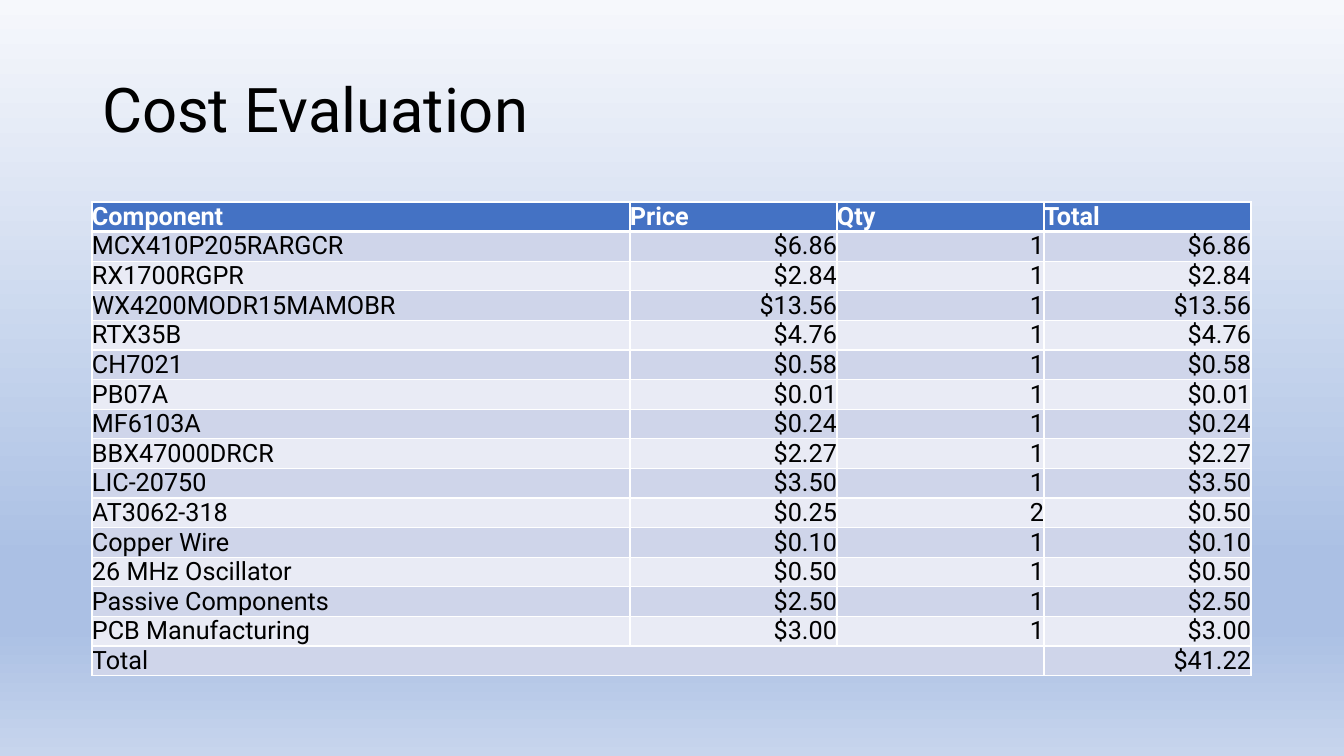
from copy import deepcopy

from pptx import Presentation
from pptx.dml.color import RGBColor
from pptx.enum.text import MSO_ANCHOR, PP_ALIGN
from pptx.oxml import parse_xml
from pptx.oxml.ns import nsdecls, qn
from pptx.util import Pt

MIDDLE = MSO_ANCHOR.MIDDLE
LEFT, RIGHT = PP_ALIGN.LEFT, PP_ALIGN.RIGHT
EMU_PER_PX = 12192000 / 1344
FONT = "Roboto"
BLACK, WHITE = "000000", "FFFFFF"
HEADER_BLUE = "4472C4"
BANDS = ["CFD5EA", "E9EBF5"]
SKY = [(0, "F6F8FC"), (74, "ABC0E4"), (83, "ABC0E4"), (100, "C7D5ED")]
HEADINGS = ["Component", "Price", "Qty", "Total"]
COMPONENTS = [
    ("MCX410P205RARGCR", 6.86, 1),
    ("RX1700RGPR", 2.84, 1),
    ("WX4200MODR15MAMOBR", 13.56, 1),
    ("RTX35B", 4.76, 1),
    ("CH7021", 0.58, 1),
    ("PB07A", 0.01, 1),
    ("MF6103A", 0.24, 1),
    ("BBX47000DRCR", 2.27, 1),
    ("LIC-20750", 3.50, 1),
    ("AT3062-318", 0.25, 2),
    ("Copper Wire", 0.10, 1),
    ("26 MHz Oscillator", 0.50, 1),
    ("Passive Components", 2.50, 1),
    ("PCB Manufacturing", 3.00, 1),
]


def px(length):
    return round(length * EMU_PER_PX)


def rgb(color):
    return RGBColor.from_string(color)


def dollars(amount):
    return f"${amount:.2f}"


def add_run(paragraph, text, size, color, bold=False):
    run = paragraph.add_run()
    run.text = text
    run.font.name = FONT
    run.font.size = Pt(size)
    run.font.bold = bold
    run.font.color.rgb = rgb(color)


def paint_background(slide, stops):
    fill = slide.background.fill
    fill.gradient()
    fill.gradient_angle = 270
    stop_list = slide.element.find(".//" + qn("a:gsLst"))
    template = deepcopy(stop_list[0])
    for stop in list(stop_list):
        stop_list.remove(stop)
    for _ in stops:
        stop_list.append(deepcopy(template))
    for stop, (percent, color) in zip(fill.gradient_stops, stops):
        stop.position = percent / 100
        stop.color.rgb = rgb(color)


def place_title(slide, text, left, top, width, height):
    title = slide.shapes.title
    title.left, title.top = px(left), px(top)
    title.width, title.height = px(width), px(height)
    title.text_frame.vertical_anchor = MIDDLE
    paragraph = title.text_frame.paragraphs[0]
    paragraph.alignment = LEFT
    paragraph.line_spacing = 0.9
    add_run(paragraph, text, 44, BLACK)


def border_cell(cell, top, bottom):
    """Draw white cell edges; top and bottom are widths in points."""
    properties = cell._tc.get_or_add_tcPr()
    for side, width in (("L", 1), ("R", 1), ("T", top), ("B", bottom)):
        properties.append(parse_xml(
            f'<a:ln{side} {nsdecls("a")} w="{Pt(width)}"><a:solidFill>'
            f'<a:srgbClr val="{WHITE}"/></a:solidFill></a:ln{side}>'))


def fill_cell(cell, row, column, text):
    is_header = row == 0
    border_cell(cell, top=3 if row == 1 else 1, bottom=3 if is_header else 1)
    cell.fill.solid()
    cell.fill.fore_color.rgb = rgb(HEADER_BLUE if is_header else BANDS[(row - 1) % 2])
    cell.margin_left = cell.margin_right = cell.margin_top = cell.margin_bottom = 0
    cell.vertical_anchor = MIDDLE
    paragraph = cell.text_frame.paragraphs[0]
    paragraph.alignment = LEFT if is_header or column == 0 else RIGHT
    if text:
        add_run(paragraph, text, 18, WHITE if is_header else BLACK, is_header)


def add_cost_table(slide, left, top, width, row_height):
    lines = [[name, dollars(price), str(quantity), dollars(price * quantity)]
             for name, price, quantity in COMPONENTS]
    total = sum(price * quantity for _, price, quantity in COMPONENTS)
    rows = [HEADINGS, *lines, ["Total", "", "", dollars(total)]]
    costs = slide.shapes.add_table(
        len(rows), len(HEADINGS), px(left), px(top), px(width),
        px(row_height * len(rows))).table
    number_width = 207
    name_width = width - number_width * (len(HEADINGS) - 1)
    for index, column in enumerate(costs.columns):
        column.width = px(number_width if index else name_width)
    for row, texts in enumerate(rows):
        for column, text in enumerate(texts):
            fill_cell(costs.cell(row, column), row, column, text)
    last = len(rows) - 1
    costs.cell(last, 0).merge(costs.cell(last, 2))


def main():
    deck = Presentation()
    deck.slide_width, deck.slide_height = px(1344), px(756)
    slide = deck.slides.add_slide(deck.slide_layouts[5])
    paint_background(slide, SKY)
    place_title(slide, "Cost Evaluation", 92, 40, 1159, 146)
    add_cost_table(slide, 92, 202, 1159, 21)
    deck.save("out.pptx")


if __name__ == "__main__":
    main()
